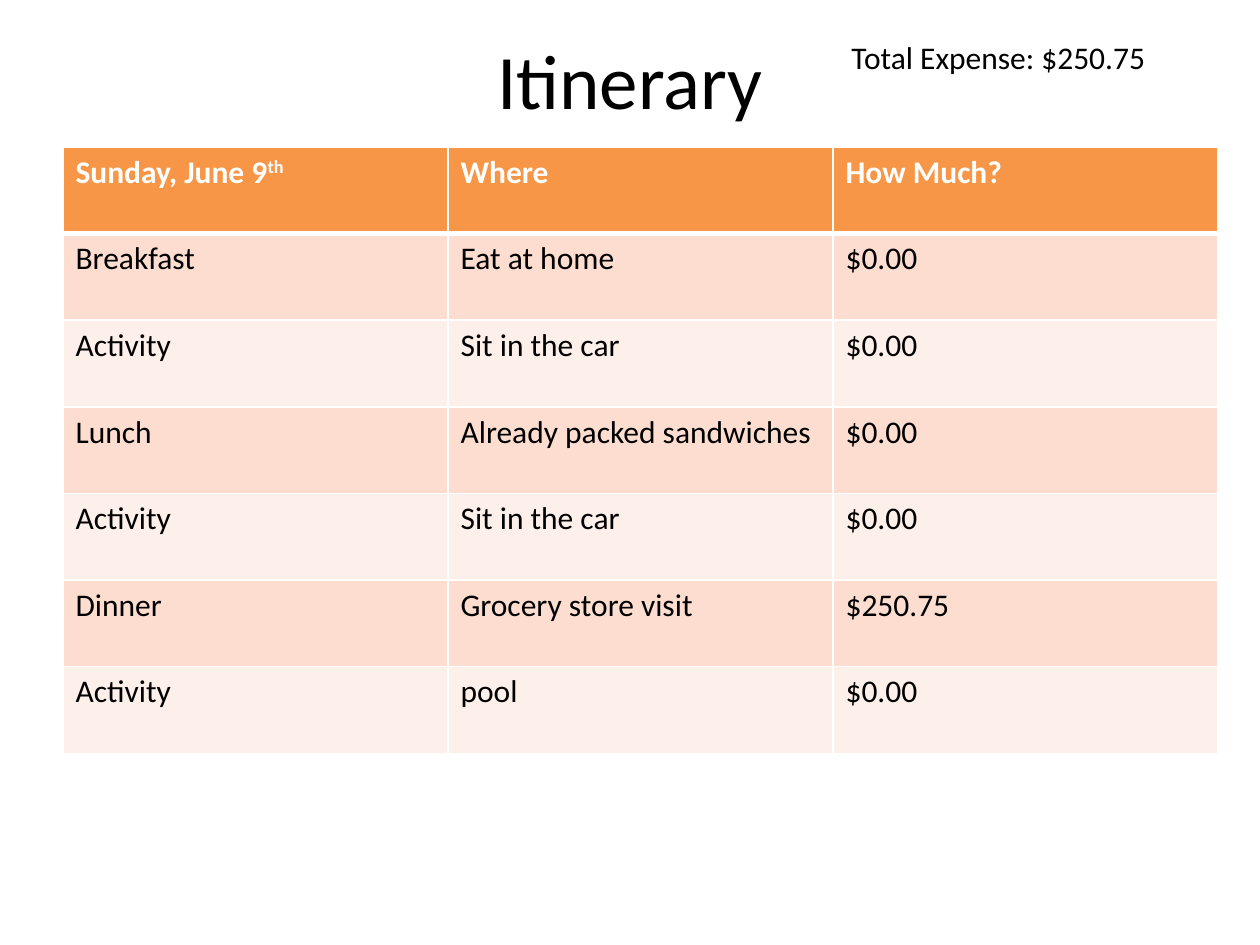
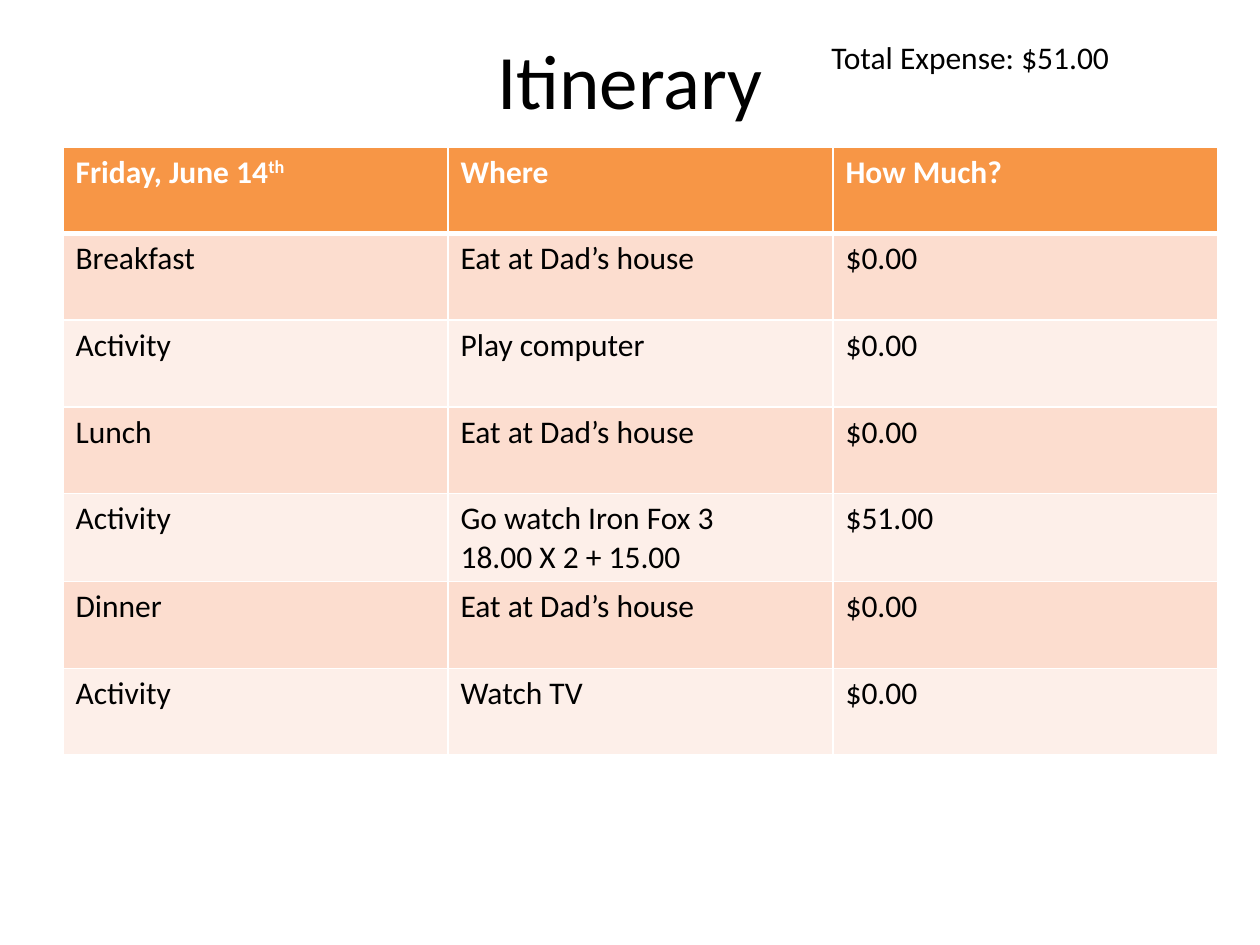
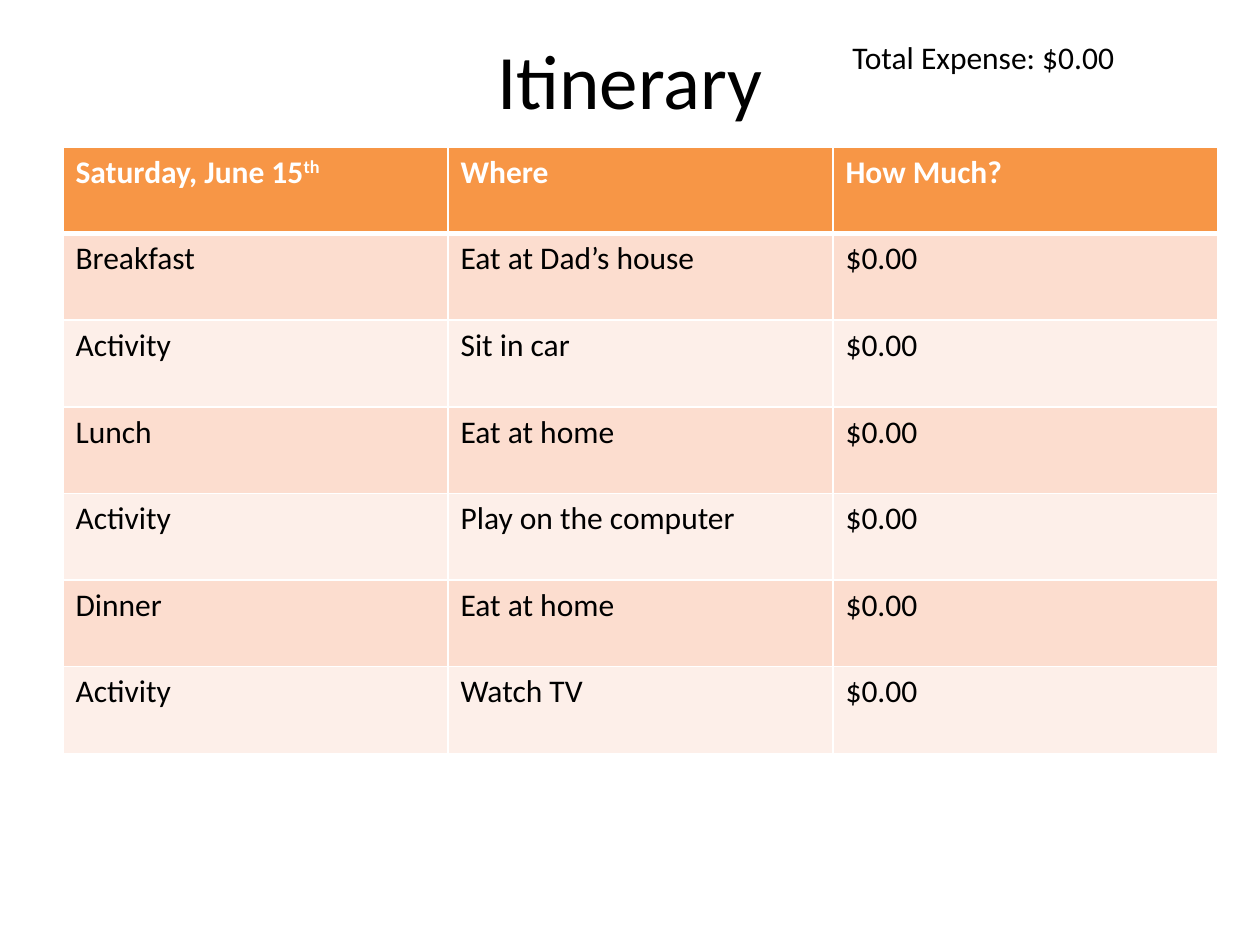
"""Builds the three itinerary slides of a family trip."""
import lxml.etree
import pptx
import pptx.dml.color
import pptx.enum.text
import pptx.oxml.ns
import pptx.util

PX = 6350
FONT = "Calibri"
BLACK = pptx.dml.color.RGBColor(0x00, 0x00, 0x00)
WHITE = pptx.dml.color.RGBColor(0xFF, 0xFF, 0xFF)
ORANGE = pptx.dml.color.RGBColor(0xF7, 0x96, 0x46)
PEACH = pptx.dml.color.RGBColor(0xFC, 0xDD, 0xCF)
CREAM = pptx.dml.color.RGBColor(0xFD, 0xEF, 0xE9)

SLOTS = ["Breakfast", "Activity", "Lunch", "Activity", "Dinner", "Activity"]
COLUMN_WIDTH = 440
ROW_HEIGHT = 99

DAYS = [
    ("Sunday, June 9", 959, [
        ("Eat at home", 0), ("Sit in the car", 0),
        ("Already packed sandwiches", 0), ("Sit in the car", 0),
        ("Grocery store visit", 250.75), ("pool", 0)]),
    ("Friday, June 14", 936, [
        ("Eat at Dad’s house", 0), ("Play computer", 0),
        ("Eat at Dad’s house", 0),
        ("Go watch Iron Fox 3\n18.00 X 2 + 15.00", 51),
        ("Eat at Dad’s house", 0), ("Watch TV", 0)]),
    ("Saturday, June 15", 960, [
        ("Eat at Dad’s house", 0), ("Sit in car", 0),
        ("Eat at home", 0), ("Play on the computer", 0),
        ("Eat at home", 0), ("Watch TV", 0)]),
]


def px(*lengths):
    """Turn px lengths into EMU."""
    return [pptx.util.Emu(n * PX) for n in lengths]


def dollars(amount):
    """Format an amount of money."""
    return f"${amount:.2f}"


def add_run(p, text, size=18, color=BLACK, bold=False):
    """Append a formatted run to a paragraph."""
    r = p.add_run()
    r.text = text
    r.font.name = FONT
    r.font.size = pptx.util.Pt(size)
    r.font.color.rgb = color
    r.font.bold = bold
    return r


def set_title(s, text):
    """Place and fill the title placeholder."""
    sp = s.shapes.title
    sp.left, sp.top, sp.width, sp.height = px(72, 0, 1296, 180)
    tf = sp.text_frame
    tf.vertical_anchor = pptx.enum.text.MSO_ANCHOR.MIDDLE
    p = tf.paragraphs[0]
    p.alignment = pptx.enum.text.PP_ALIGN.CENTER
    add_run(p, text, size=44)


def add_total(s, left, amount):
    """Add the day's total in the top right corner."""
    tf = s.shapes.add_textbox(*px(left, 36, 444, 58)).text_frame
    tf.word_wrap = True
    tf.auto_size = pptx.enum.text.MSO_AUTO_SIZE.SHAPE_TO_FIT_TEXT
    add_run(tf.paragraphs[0], f"Total Expense: {dollars(amount)}")


def set_borders(cell, top, bottom):
    """Draw white cell borders, with top and bottom widths in points."""
    tc_pr = cell._tc.get_or_add_tcPr()
    qn = pptx.oxml.ns.qn
    widths = {"a:lnL": 1, "a:lnR": 1, "a:lnT": top, "a:lnB": bottom}
    for i, (tag, width) in enumerate(widths.items()):
        ln = lxml.etree.Element(qn(tag), w=str(pptx.util.Pt(width)))
        fill = lxml.etree.SubElement(ln, qn("a:solidFill"))
        lxml.etree.SubElement(fill, qn("a:srgbClr"), val=str(WHITE))
        tc_pr.insert(i, ln)


def fill_cell(cell, text, row):
    """Write a cell and style it by its row."""
    header = row == 0
    cell.fill.solid()
    cell.fill.fore_color.rgb = ORANGE if header else PEACH if row % 2 else CREAM
    set_borders(cell, top=3 if row == 1 else 1, bottom=3 if header else 1)
    tf = cell.text_frame
    for i, line in enumerate(text.split("\n")):
        p = tf.add_paragraph() if i else tf.paragraphs[0]
        add_run(p, line, color=WHITE if header else BLACK, bold=header)


def add_itinerary(s, day, plans):
    """Add the table of a day's plans and costs."""
    rows = [(day, "Where", "How Much?")]
    rows += [(slot, where, dollars(cost))
             for slot, (where, cost) in zip(SLOTS, plans)]
    columns = len(rows[0])
    box = px(72, 168, columns * COLUMN_WIDTH, len(rows) * ROW_HEIGHT)
    table = s.shapes.add_table(len(rows), columns, *box).table
    for i, row in enumerate(rows):
        for j, text in enumerate(row):
            fill_cell(table.cell(i, j), text, i)
    p = table.cell(0, 0).text_frame.paragraphs[0]
    suffix = add_run(p, "th", color=WHITE, bold=True)
    suffix._r.get_or_add_rPr().set("baseline", "30000")


def main():
    """Build and save the slides."""
    prs = pptx.Presentation()
    prs.slide_width, prs.slide_height = px(1440, 1080)
    for day, total_left, plans in DAYS:
        s = prs.slides.add_slide(prs.slide_layouts[5])
        set_title(s, "Itinerary")
        add_total(s, total_left, sum(cost for _, cost in plans))
        add_itinerary(s, day, plans)
    prs.save("out.pptx")


if __name__ == "__main__":
    main()
